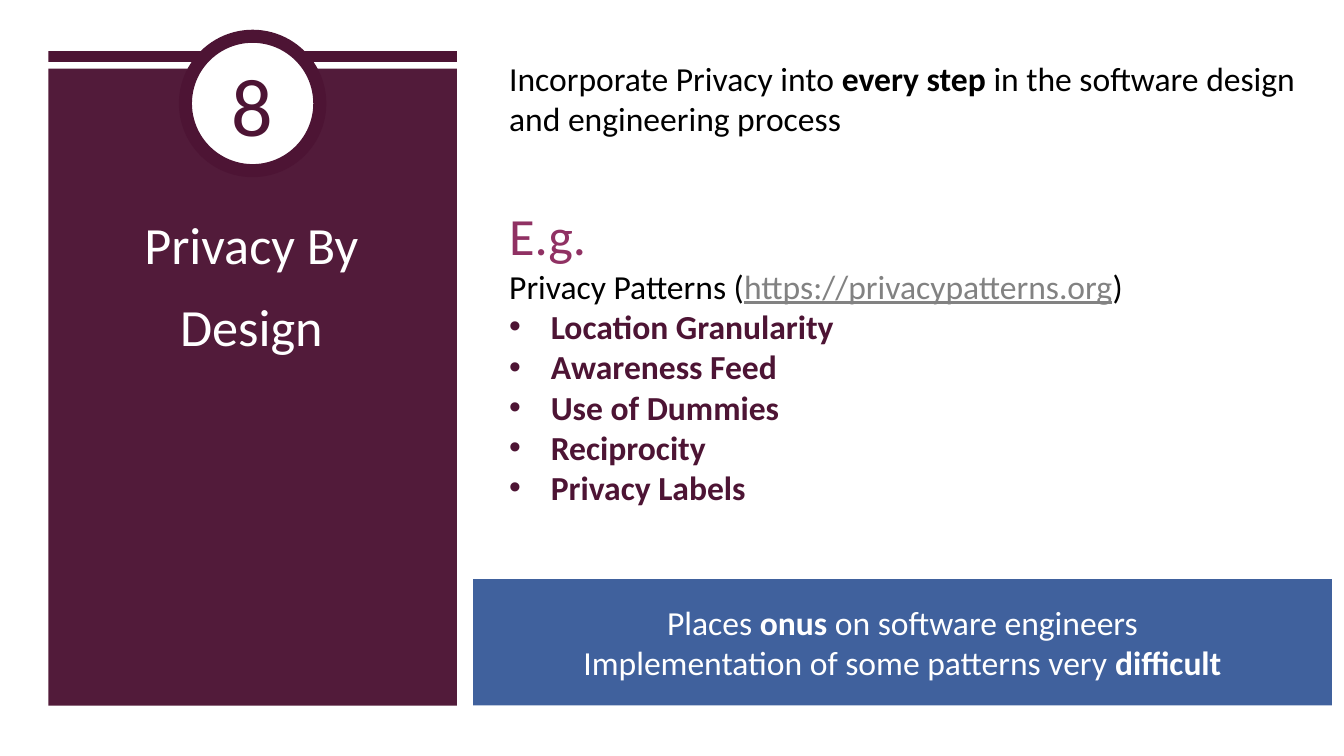
"""Builds the "Privacy By Design" slide."""
from dataclasses import dataclass, field
from typing import Optional

from lxml.etree import SubElement
from pptx import Presentation
from pptx.dml.color import RGBColor
from pptx.enum.shapes import MSO_SHAPE
from pptx.enum.text import MSO_ANCHOR, PP_ALIGN
from pptx.oxml.ns import qn
from pptx.util import Inches, Pt

WIDTH, HEIGHT = Inches(10), Inches(5.625)
FONT = "Calibri"
WHITE = RGBColor(0xFF, 0xFF, 0xFF)
BLACK = RGBColor(0x00, 0x00, 0x00)
PLUM = RGBColor(0x4D, 0x14, 0x34)
MAGENTA = RGBColor(0x90, 0x31, 0x63)
GREY = RGBColor(0x82, 0x82, 0x82)
BLUE = RGBColor(0x40, 0x61, 0x9D)


@dataclass(frozen=True)
class Frame:
    """A place on the slide, in percent of its width and height."""
    left: float
    top: float
    width: float
    height: float

    def lengths(self) -> tuple[int, ...]:
        """Return left, top, width and height as slide lengths."""
        return (int(WIDTH * self.left / 100), int(HEIGHT * self.top / 100),
                int(WIDTH * self.width / 100), int(HEIGHT * self.height / 100))


@dataclass(frozen=True)
class Span:
    """A stretch of text in one format."""
    text: str
    color: RGBColor = BLACK
    size: int = 18
    bold: bool = False
    underline: bool = False


@dataclass(frozen=True)
class Para:
    """A paragraph with its format values."""
    spans: tuple[Span, ...]
    layout: dict = field(default_factory=dict)
    indent: float = 0
    bullet: str = ""


@dataclass(frozen=True)
class Block:
    """A preset shape with optional outline and text."""
    frame: Frame
    fill: RGBColor
    preset: MSO_SHAPE = MSO_SHAPE.RECTANGLE
    outline: Optional[RGBColor] = None
    outline_width: float = 0
    opacity: int = 100
    paras: tuple[Para, ...] = ()


@dataclass(frozen=True)
class Note:
    """A text box."""
    frame: Frame
    paras: tuple[Para, ...]


CENTERED = {"alignment": PP_ALIGN.CENTER}
TITLE_LAYOUT = CENTERED | {"space_before": Pt(5.6), "space_after": Pt(4.5)}
PATTERNS = ("Location Granularity", "Awareness Feed", "Use of Dummies",
            "Reciprocity", "Privacy Labels")

ITEMS = (
    Block(Frame(0, 0, 100, 100), WHITE),
    Block(Frame(3.6, 9.07, 30.4, 84.26), PLUM, opacity=97),
    Block(Frame(3.6, 6.76, 30.4, 1.42), PLUM),
    Note(Frame(5.8, 27.2, 25.8, 63.64), tuple(
        Para((Span(word, WHITE, 28),), TITLE_LAYOUT, 0.25)
        for word in ("Privacy By", "Design"))),
    Block(Frame(13.8, 4.8, 10, 17.78), WHITE, MSO_SHAPE.OVAL, PLUM, 7,
          paras=(Para((Span("8", PLUM, 44),), CENTERED),)),
    Note(Frame(36.9, 6.76, 60.6, 12.62), (
        Para((Span("Incorporate Privacy into "), Span("every step ", bold=True),
              Span("in the software design and engineering process"))),)),
    Note(Frame(36.9, 25.96, 59.5, 47.82), (
        Para((Span("E.g.", MAGENTA, 28),)),
        Para((Span("Privacy Patterns ("),
              Span("https://privacypatterns.org", GREY, underline=True),
              Span(")"))),
        *(Para((Span(name, PLUM, bold=True),), indent=0.31, bullet="•")
          for name in PATTERNS))),
    Block(Frame(35.2, 76.62, 63.9, 16.71), BLUE, paras=(
        Para((Span("Places ", WHITE), Span("onus", WHITE, bold=True),
              Span(" on software engineers", WHITE)), CENTERED),
        Para((Span("Implementation of some patterns very ", WHITE),
              Span("difficult", WHITE, bold=True)), CENTERED))),
)


def apply(target, values: dict) -> None:
    """Set each format value on the target."""
    for name, value in values.items():
        setattr(target, name, value)


def write(text_frame, paras: tuple[Para, ...], anchor: MSO_ANCHOR) -> None:
    """Fill a text frame with paragraphs."""
    apply(text_frame, {"word_wrap": True, "vertical_anchor": anchor})
    for index, para in enumerate(paras):
        paragraph = text_frame.add_paragraph() if index else text_frame.paragraphs[0]
        apply(paragraph, para.layout)
        properties = paragraph._p.get_or_add_pPr()
        if para.indent:
            properties.set("marL", str(Inches(para.indent)))
            properties.set("indent", str(-Inches(para.indent)))
        if para.bullet:
            SubElement(properties, qn("a:buFont"), typeface="Arial")
            SubElement(properties, qn("a:buChar"), char=para.bullet)
        for span in para.spans:
            run = paragraph.add_run()
            run.text = span.text
            apply(run.font, {"name": FONT, "size": Pt(span.size),
                             "bold": span.bold, "underline": span.underline})
            run.font.color.rgb = span.color


def draw_block(page, block: Block) -> None:
    """Draw a filled shape with its text."""
    shape = page.shapes.add_shape(block.preset, *block.frame.lengths())
    shape.shadow.inherit = False
    shape.fill.solid()
    shape.fill.fore_color.rgb = block.fill
    if block.opacity < 100:
        color = shape._element.spPr.find(qn("a:solidFill"))[0]
        SubElement(color, qn("a:alpha"), val=str(block.opacity * 1000))
    if block.outline is None:
        shape.line.fill.background()
    else:
        shape.line.color.rgb = block.outline
        shape.line.width = Pt(block.outline_width)
    if block.paras:
        write(shape.text_frame, block.paras, MSO_ANCHOR.MIDDLE)


def draw_note(page, note: Note) -> None:
    """Draw a text box."""
    box = page.shapes.add_textbox(*note.frame.lengths())
    write(box.text_frame, note.paras, MSO_ANCHOR.TOP)


def main() -> None:
    """Build and save the deck."""
    deck = Presentation()
    apply(deck, {"slide_width": WIDTH, "slide_height": HEIGHT})
    page = deck.slides.add_slide(deck.slide_layouts[6])
    for item in ITEMS:
        draw = draw_block if isinstance(item, Block) else draw_note
        draw(page, item)
    deck.save("out.pptx")


if __name__ == "__main__":
    main()
